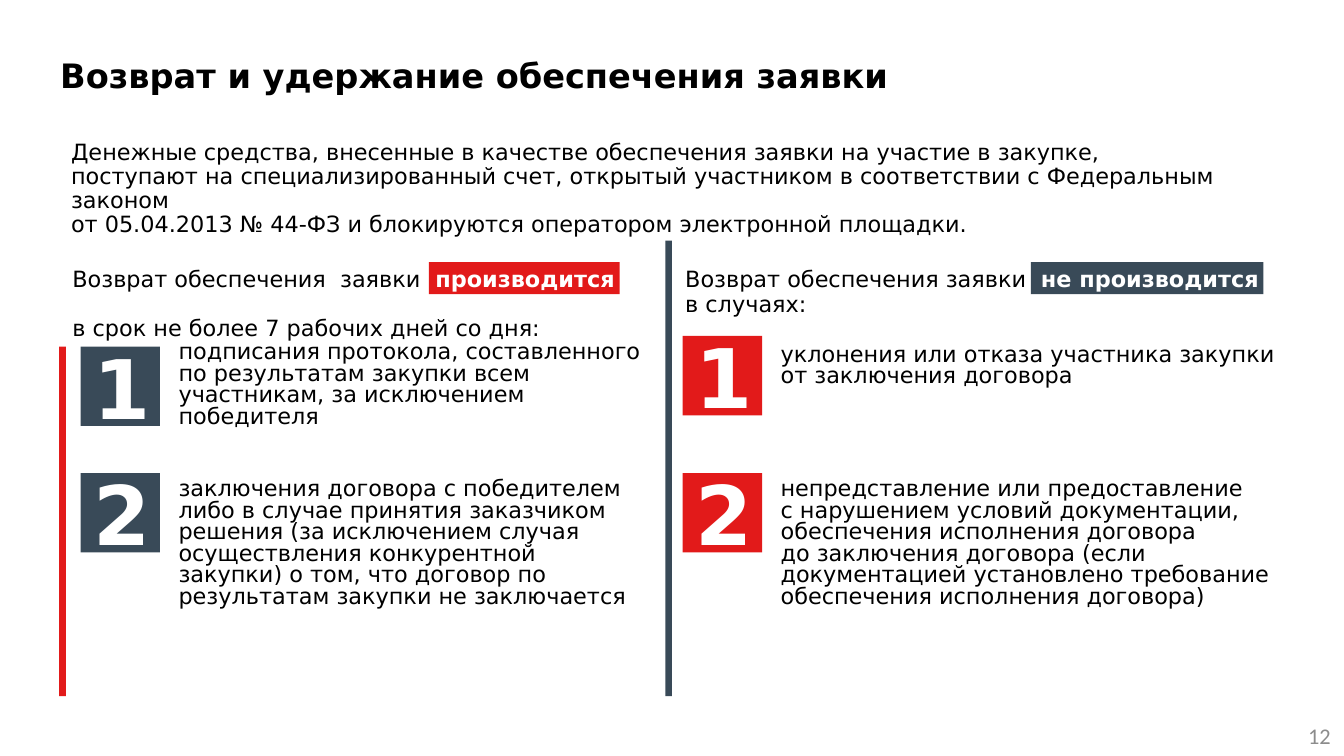
from copy import deepcopy

from pptx import Presentation
from pptx.dml.color import RGBColor
from pptx.enum.shapes import MSO_SHAPE as Shape
from pptx.enum.text import MSO_ANCHOR as Anchor, PP_ALIGN as Align
from pptx.util import Inches, Pt

# Lengths are grid cells: 100 columns across, 56.25 rows down, on square cells.
COLUMNS, ROWS = 100, 56.25
CELL = Inches(10) / COLUMNS
RED, SLATE, BLACK, WHITE, GRAY = "E21A1A", "394A58", "000000", "FFFFFF", "8C8C8C"
BAR_WIDTH, TILE_SIZE, BADGE_HEIGHT = 0.5, 5.9, 2.4
HEADING_ROW = 1.6


def cells(*counts):
    return [round(count * CELL) for count in counts]


def color(value):
    return RGBColor.from_string(value)


def break_line(paragraph):
    """Line break that keeps the format of the run before it."""
    properties = paragraph.runs[-1].font._element
    paragraph.add_line_break()
    paragraph._p[-1].append(deepcopy(properties))


def write(shape, content, size=12, fill=BLACK, bold=False, font="DejaVu Sans",
          align=Align.LEFT, anchor=Anchor.TOP, spacing=1.0):
    """Content is a list of paragraphs, each a list of (text, format) runs or plain text."""
    frame = shape.text_frame
    frame.word_wrap = True
    frame.vertical_anchor = anchor
    for index, runs in enumerate(content):
        paragraph = frame.paragraphs[0] if index == 0 else frame.add_paragraph()
        paragraph.alignment = align
        paragraph.line_spacing = spacing
        for text, style in [(runs, {})] if isinstance(runs, str) else runs:
            for number, line in enumerate(text.split("\n")):
                if number:
                    break_line(paragraph)
                if not line:
                    continue
                run = paragraph.add_run()
                run.text = line
                run.font.name = font
                run.font.size = Pt(size)
                run.font.bold = style.get("bold", bold)
                run.font.color.rgb = color(style.get("fill", fill))


def add_text(slide, box, content, **style):
    write(slide.shapes.add_textbox(*cells(*box)), content, **style)


def add_block(slide, box, fill):
    shape = slide.shapes.add_shape(Shape.RECTANGLE, *cells(*box))
    shape.shadow.inherit = False
    shape.fill.solid()
    shape.fill.fore_color.rgb = color(fill)
    shape.line.fill.background()
    return shape


def add_item(slide, box, number, text, fill, text_rise=0):
    """Numbered tile at the left of the box, text beside it."""
    left, top, width, height = box
    tile = add_block(slide, (left, top, TILE_SIZE, TILE_SIZE), fill)
    write(tile, [str(number)], size=44, fill=WHITE, bold=True,
          align=Align.CENTER, anchor=Anchor.MIDDLE)
    text_left = TILE_SIZE + 0.4
    add_text(slide, (left + text_left, top - text_rise, width - text_left, height),
             text, spacing=0.8)


def add_panel(slide, box, bar_top, bar_fill, heading, heading_box, badge, items, item_left, tile_fill):
    """Bar at the left edge, heading with a highlighted word, then numbered items."""
    left, top, width, height = box
    add_block(slide, (left, top + bar_top, BAR_WIDTH, height - bar_top), bar_fill)
    badge_left, badge_width, badge_fill = badge
    add_block(slide, (left + badge_left, top + HEADING_ROW, badge_width, BADGE_HEIGHT), badge_fill)
    start, highlight, end = heading
    heading_left, heading_width = heading_box
    add_text(slide, (left + heading_left, top + HEADING_ROW, heading_width, 4.6),
             [[(start, {}), (highlight, {"fill": WHITE, "bold": True}), (end, {})]],
             spacing=0.9)
    for number, (row, item_width, item_height, rise, text) in enumerate(items, 1):
        add_item(slide, (left + item_left, top + row, item_width, item_height),
                 number, text, tile_fill, rise)


def add_return_panel(slide, box):
    add_panel(
        slide, box, bar_top=7.9, bar_fill=RED,
        heading=("Возврат обеспечения  заявки  ", "производится \n",
                 "в срок не более 7 рабочих дней со дня:"),
        heading_box=(0, 42.5), badge=(27.5, 14.2, RED),
        item_left=1.6, tile_fill=SLATE,
        items=[
            (7.9, 43.2, 7.5, 0.8,
             ["подписания протокола, составленного по результатам закупки всем "
              "участникам, за исключением победителя"]),
            (17.3, 42.5, 10.7, 0,
             ["заключения договора с победителем либо в случае принятия заказчиком "
              "решения (за исключением случая осуществления конкурентной закупки) "
              "о том, что договор по результатам закупки не заключается"]),
        ])


def add_retention_panel(slide, box):
    add_panel(
        slide, box, bar_top=0, bar_fill=SLATE,
        heading=("Возврат обеспечения заявки  ", "не производится \n", "в случаях:"),
        heading_box=(0.5, 45.7), badge=(27.2, 17.3, SLATE),
        item_left=1.3, tile_fill=RED,
        items=[
            (7.1, 45.7, 5.9, -0.2,
             ["уклонения или отказа участника закупки от заключения договора"]),
            (17.3, 45.7, 10.7, 0,
             ["непредставление или предоставление \nс нарушением условий документации,",
              "обеспечения исполнения договора \nдо заключения договора (если "
              "документацией установлено требование обеспечения исполнения договора)"]),
        ])


def add_introduction(slide, box):
    add_text(slide, box,
             ["Денежные средства, внесенные в качестве обеспечения заявки на участие "
              "в закупке, поступают на специализированный счет, открытый участником "
              "в соответствии с Федеральным законом \nот 05.04.2013 № 44-ФЗ и "
              "блокируются оператором электронной площадки."], spacing=0.9)


def main():
    presentation = Presentation()
    presentation.slide_width, presentation.slide_height = cells(COLUMNS, ROWS)
    slide = presentation.slides.add_slide(presentation.slide_layouts[6])
    add_text(slide, (3.5, 2.9, 90, 6), ["Возврат и удержание обеспечения заявки"],
             size=18, bold=True, anchor=Anchor.MIDDLE, spacing=0.8)
    add_introduction(slide, (4.3, 10, 88.2, 6.5))
    add_return_panel(slide, (4.4, 17.9, 45.1, 33.9))
    add_retention_panel(slide, (49.5, 17.9, 50.5, 33.9))
    add_text(slide, (76.7, ROWS - 3, 23.3, 3), ["12"], font="Calibri", fill=GRAY,
             align=Align.RIGHT, anchor=Anchor.MIDDLE)
    presentation.save("out.pptx")


if __name__ == "__main__":
    main()
